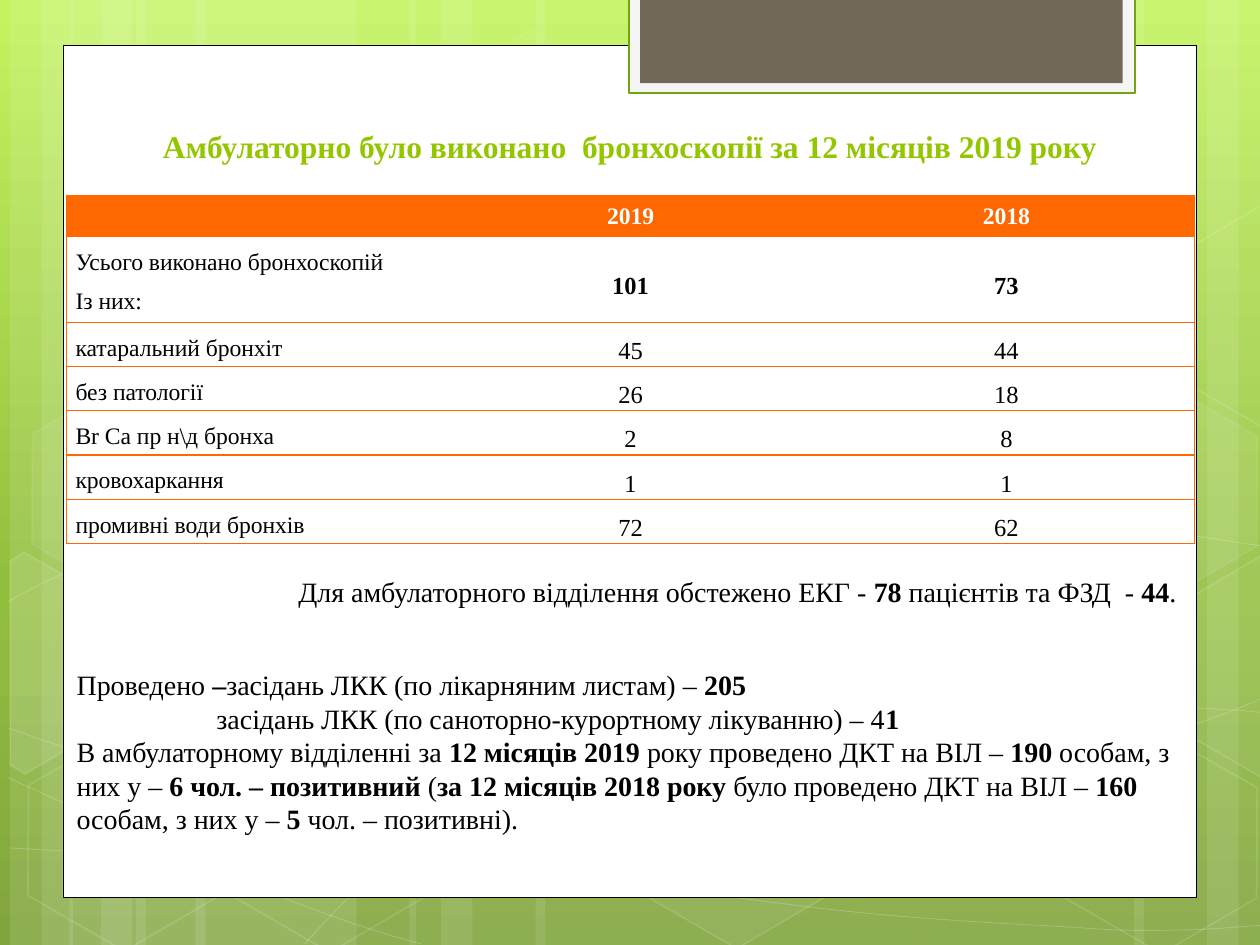
import copy
import math
from lxml import etree
from pptx import Presentation
from pptx import util as u
from pptx.dml import color
from pptx.enum import shapes, text
from pptx.oxml import ns

FONT = "Times New Roman"
WHITE, BLACK, ORANGE = "FFFFFF", "000000", "FF6700"
AL, MID = text.PP_ALIGN, text.MSO_ANCHOR

BANDS = [(1.08, 1.75, 0), (0.08, 0.5, 0), (0.33, 0.83, 0), (1.55, 1.75, 0),
         (0.55, 0.5, 0), (0.8, 0.83, 0), (7.33, 1.75, 180), (9.58, 0.5, 180),
         (9, 0.83, 180), (4.25, 3.08, 0), (3.25, 0.5, 0), (3.5, 0.83, 0)]

CURVES = [
    [(0.07, 6.73), (0.61, 6.76), (1.15, 6.79), (1.9, 6.78),
     (2.65, 6.77), (3.58, 6.75), (4.58, 6.65), (5.58, 6.55), (7, 6.36),
     (7.92, 6.17), (8.83, 5.98), (9.77, 5.68), (10.07, 5.51)],
    [(0.07, 4.77), (0.36, 4.61), (0.65, 4.46), (1.21, 4.31),
     (1.78, 4.16), (2.59, 3.94), (3.47, 3.87), (4.36, 3.8), (5.44, 3.79),
     (6.54, 3.87), (7.64, 3.95), (9.47, 4.26), (10.07, 4.34)],
    [(0.06, 6.17), (1.27, 6.72), (2.47, 7.27), (3.34, 7.49)],
    [(0.07, 5.78), (0.38, 5.89), (0.7, 6), (1.28, 6.16),
     (1.86, 6.31), (2.73, 6.56), (3.57, 6.73), (4.4, 6.9), (5.45, 7.08),
     (6.28, 7.18), (7.11, 7.29), (8, 7.33), (8.53, 7.36),
     (9.05, 7.4), (9.19, 7.38), (9.45, 7.38),
     (9.71, 7.37), (9.89, 7.35), (10.07, 7.34)],
    [(2.42, 7.49), (2.6, 7.29), (2.78, 7.09), (3.02, 6.91),
     (3.26, 6.73), (3.6, 6.53), (3.88, 6.39), (4.16, 6.25), (4.33, 6.19),
     (4.7, 6.09), (5.06, 5.99), (5.73, 5.85), (6.08, 5.78),
     (6.44, 5.71), (6.49, 5.71), (6.8, 5.69), (7.11, 5.66), (7.6, 5.63),
     (7.94, 5.62), (8.29, 5.61), (8.86, 5.62), (8.86, 5.62),
     (9.08, 5.62), (9.31, 5.62), (9.53, 5.62), (9.71, 5.63), (9.88, 5.64),
     (9.97, 5.65), (10.06, 5.66), (10.03, 5.65), (10.06, 5.66)],
]

HEXES = [(3.34, 0.36, 4, 8), (4.97, 5.89, 6, 12), (0.11, 5.91, 0, 12),
         (0.14, 3.12, 7, 8), (1.74, 5.92, 0, 12), (7.53, 4.53, 10, 12),
         (8.34, 5.93, 0, 12), (8.34, 3.14, 7, 8)]

CUTS = [
    ([(0.08, 4.45), (0.19, 4.38), (0.96, 4.82), (0.95, 5.7),
      (0.2, 6.14), (0.08, 6.07)], (0.36, 5.35), 10),
    ([(9.26, 4.85), (10.01, 4.41), (10.09, 4.46), (10.09, 6.13),
      (10.02, 6.17), (9.26, 5.73)], (9.85, 5.2), 4),
    ([(9.26, 2.07), (10.01, 1.63), (10.1, 1.68), (10.09, 3.35),
      (10.02, 3.39), (9.26, 2.95)], (9.85, 2.41), 0),
]

ROWS = [
    ("", "2019", "2018"),
    ("Усього виконано бронхоскопій\nІз них:", "101", "73"),
    ("катаральний бронхіт", "45", "44"),
    ("без патології ", "26", "18"),
    ("Br Ca пр н\\д бронха", "2", "8"),
    ("кровохаркання", "1", "1"),
    ("промивні води бронхів", "72", "62"),
]

NOTES = [
    (AL.RIGHT, 0, 0, ["Для амбулаторного відділення обстежено ЕКГ - ", "78",
                      " пацієнтів та ФЗД  - ", "44", ". "]),
    (AL.LEFT, 34, 0, ["Проведено ", "–",
                      "засідань ЛКК (по лікарняним листам) – ", "205"]),
    (AL.LEFT, 0, 1.11, ["засідань ЛКК (по саноторно-курортному лікуванню) – 4",
                        "1"]),
    (AL.LEFT, 0, 0, ["В амбулаторному відділенні за ", "12 місяців 2019",
                     " року проведено ДКТ на ВІЛ – ", "190 ",
                     "особам, з них у – ", "6 чол. – позитивний ", "(",
                     "за 12 місяців 2018 року",
                     " було проведено ДКТ на ВІЛ – ", "160 ",
                     "особам, з них у – ", "5 ", "чол. – позитивні)."]),
]


def rgb(code):
    return color.RGBColor.from_string(code)


def tint(fill, code, part=100):
    if not part:
        fill.background()
        return
    fill.solid()
    fill.fore_color.rgb = rgb(code)
    if part < 100:
        node = fill._xPr.find(".//" + ns.qn("a:srgbClr"))
        etree.SubElement(node, ns.qn("a:alpha"), val=str(part * 1000))


def style(shape, code, part, edge=None, width=0, clear=100):
    shape.shadow.inherit = False
    tint(shape.fill, code, part)
    tint(shape.line.fill, edge or WHITE, clear if edge else 0)
    if edge:
        shape.line.width = u.Pt(width)


def block(slide, kind, box, *look):
    shape = slide.shapes.add_shape(kind, *map(u.Inches, box))
    style(shape, *look)
    return shape


def trace(slide, dots, close, *look):
    dots = [(u.Inches(x), u.Inches(y)) for x, y in dots]
    pen = slide.shapes.build_freeform(*dots[0])
    pen.add_line_segments(dots[1:], close=close)
    shape = pen.convert_to_shape()
    style(shape, *look)
    return shape


def bend(shape):
    legs = list(shape._element.iter(ns.qn("a:lnTo")))
    for at in range(0, len(legs), 3):
        curve = etree.Element(ns.qn("a:cubicBezTo"))
        legs[at].addprevious(curve)
        for leg in legs[at:at + 3]:
            curve.append(leg[0])
            leg.getparent().remove(leg)


def spin(dots, mid, turn):
    cos, sin = math.cos(math.radians(turn)), math.sin(math.radians(turn))
    return [(mid[0] + (x - mid[0]) * cos - (y - mid[1]) * sin,
             mid[1] + (x - mid[0]) * sin + (y - mid[1]) * cos)
            for x, y in dots]


def write(para, words, size, bold=False, code=BLACK):
    run = para.add_run()
    run.text = words
    font = run.font
    font.name, font.size, font.bold = FONT, u.Pt(size), bold
    font.color.rgb = rgb(code)


def frame(slide, box):
    body = slide.shapes.add_textbox(*map(u.Inches, box)).text_frame
    body.word_wrap = True
    return body


def wash(slide):
    fill = slide.background.fill
    fill.gradient()
    fill.gradient_angle = 270
    first = fill.gradient_stops[0]._gs
    first.addnext(copy.deepcopy(first))
    for stop, code, spot in zip(fill.gradient_stops,
                                ("C3F35F", "93BF3F", "81A53E"),
                                (0, 0.62, 1)):
        stop.color.rgb = rgb(code)
        stop.position = spot


def rule(cell, sides):
    props = cell._tc.get_or_add_tcPr()
    for spot, side in enumerate(("L", "R", "T", "B")):
        line = etree.Element(ns.qn("a:ln" + side),
                             w=str(u.Pt(0.75) if side in sides else 0))
        if side in sides:
            fill = etree.SubElement(line, ns.qn("a:solidFill"))
            etree.SubElement(fill, ns.qn("a:srgbClr"), val=ORANGE)
        else:
            etree.SubElement(line, ns.qn("a:noFill"))
        props.insert(spot, line)


def fill_cell(cell, words, row, col):
    head = row == 0
    tint(cell.fill, ORANGE if head else WHITE)
    rule(cell, "TB" + ("L", "", "R")[col])
    if head or col:
        cell.vertical_anchor = MID.MIDDLE
    if not head:
        cell.margin_left = cell.margin_right = u.Inches(0.07)
        cell.margin_top = cell.margin_bottom = 0
    body = cell.text_frame
    for spot, line in enumerate(words.split("\n")):
        para = body.add_paragraph() if spot else body.paragraphs[0]
        para.alignment = AL.CENTER if head or col else AL.JUSTIFY
        if not head:
            para.line_spacing = 1.5
        if line:
            write(para, line, 14 if col and not head else 13.5,
                  head or (row == 1 and col > 0), WHITE if head else BLACK)
        else:
            etree.SubElement(para._p, ns.qn("a:endParaRPr"), sz="1350")


def grid(slide):
    box = map(u.Inches, (0.53, 1.55, 8.95, 2.76))
    table = slide.shapes.add_table(len(ROWS), 3, *box).table
    for col in table.columns:
        col.width = u.Inches(8.95 / 3)
    for row, words in enumerate(ROWS):
        table.rows[row].height = u.Inches({0: 0.33, 1: 0.68}.get(row, 0.35))
        for col, word in enumerate(words):
            fill_cell(table.cell(row, col), word, row, col)


def notes(slide):
    body = frame(slide, (0.51, 4.51, 8.98, 2.42))
    body.auto_size = text.MSO_AUTO_SIZE.SHAPE_TO_FIT_TEXT
    for spot, (align, gap, inset, parts) in enumerate(NOTES):
        para = body.add_paragraph() if spot else body.paragraphs[0]
        para.alignment, para.space_before = align, u.Pt(gap)
        if inset:
            para._p.get_or_add_pPr().set("marL", str(u.Inches(inset)))
        for turn, words in enumerate(parts):
            write(para, words, 16, turn % 2 == 1)


def decor(slide):
    kind = shapes.MSO_SHAPE
    for left, wide, turn in BANDS:
        band = block(slide, kind.RECTANGLE, (left, 0, wide, 7.5), WHITE, 10)
        band.rotation = turn
    for knots in CURVES:
        bend(trace(slide, knots, False, WHITE, 0, WHITE, 0.5, 20))
    for left, top, part, clear in HEXES:
        tile = block(slide, kind.HEXAGON, (left, top, 1.75, 1.52),
                     WHITE, part, WHITE, 1, clear)
        tile.adjustments[0] = 0.285
        tile.rotation = 30
    for dots, mid, part in CUTS:
        cut = trace(slide, spin(dots, mid, -30), True,
                    WHITE, part, WHITE, 1, 12)
        cut.rotation = 30
    for box, *look in (
            ((0.5, 0.36, 9, 6.76), WHITE, 100, BLACK, 0.5),
            ((4.99, -0.02, 4.02, 0.76), "F5F5F5", 100, "74A510", 1.25),
            ((5.08, -0.02, 3.83, 0.68), "71685A", 100)):
        block(slide, kind.RECTANGLE, box, *look)


def main():
    deck = Presentation()
    deck.slide_width, deck.slide_height = u.Inches(10), u.Inches(7.5)
    slide = deck.slides.add_slide(deck.slide_layouts[6])
    wash(slide)
    decor(slide)
    title = frame(slide, (0, 0.76, 10, 0.6))
    title.vertical_anchor = MID.BOTTOM
    title.paragraphs[0].alignment = AL.CENTER
    write(title.paragraphs[0],
          "Амбулаторно було виконано  бронхоскопії за 12 місяців 2019 року",
          18, True, "94C600")
    grid(slide)
    notes(slide)
    deck.save("out.pptx")


if __name__ == "__main__":
    main()
